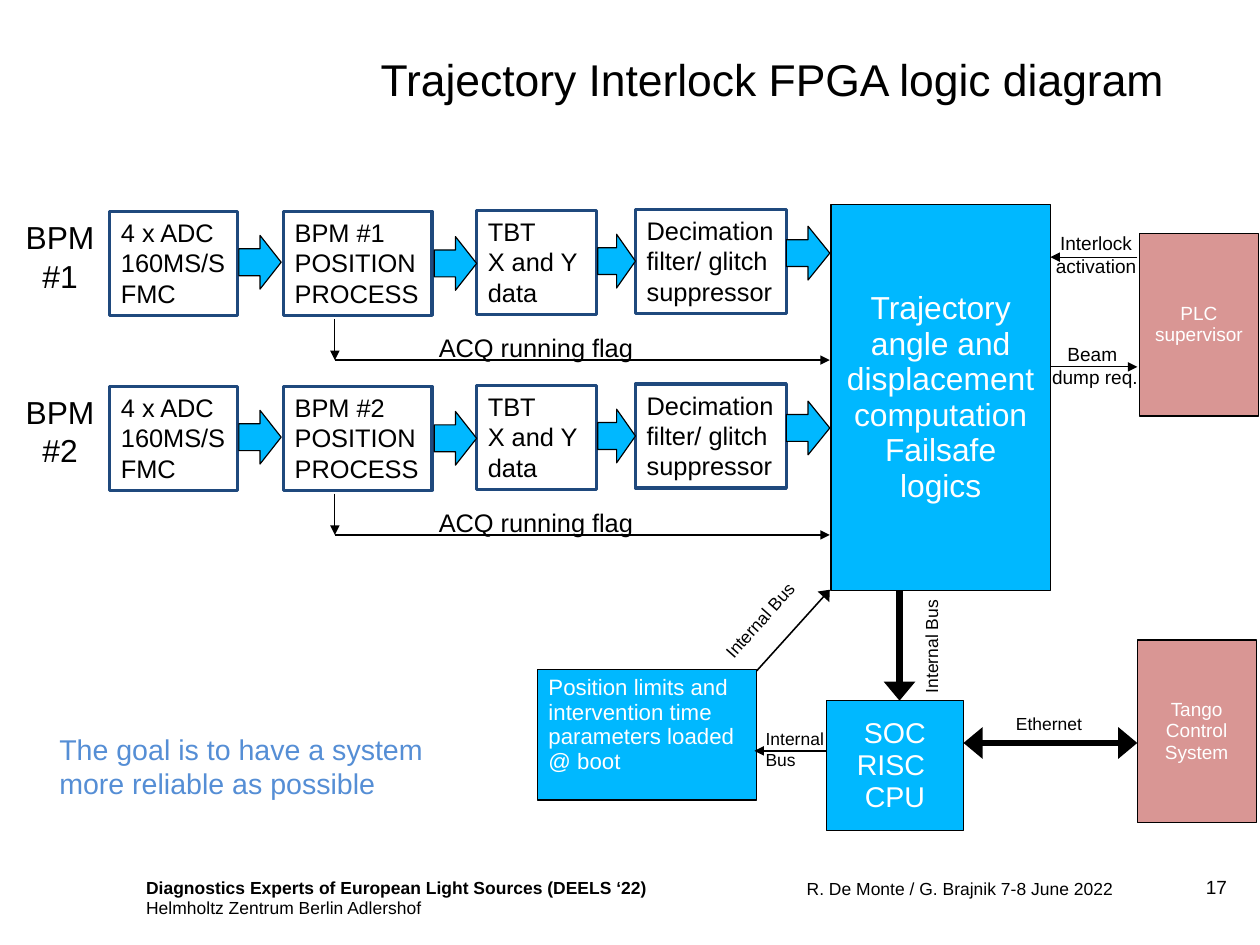
import pptx
import pptx.util
import pptx.oxml.ns
import lxml.etree
from dataclasses import dataclass
from pptx.dml.color import RGBColor
from pptx.enum.shapes import MSO_CONNECTOR, MSO_SHAPE
from pptx.enum.text import MSO_ANCHOR, PP_ALIGN
from pptx.util import Inches


@dataclass(frozen=True)
class Theme:
    font: str = "Arial"
    black: str = "000000"
    white: str = "FFFFFF"
    logic: str = "00B8FF"
    external: str = "D99694"
    outline: str = "1F497D"
    goal: str = "558ED5"
    title: int = 28
    large: int = 20
    medium: int = 18
    stage: int = 16
    note: int = 14
    label: int = 12
    small: int = 11
    tight: float = 0.93


THEME = Theme()
LEFT, CENTER, RIGHT = PP_ALIGN.LEFT, PP_ALIGN.CENTER, PP_ALIGN.RIGHT

# Content: places are (left, top, width, height) in inches
TITLE = "Trajectory Interlock FPGA logic diagram"
CHANNELS = ["#1", "#2"]
CHANNEL_PITCH = 1.53
STAGES = [
    (["4 x ADC", "160MS/S", "FMC"], (0.96, 1.85, 1.12, 0.91)),
    (["BPM {}", "POSITION", "PROCESS"], (2.48, 1.85, 1.3, 0.91)),
    (["TBT", "X and Y", "data"], (4.17, 1.84, 1.05, 0.91)),
    (["Decimation filter/ glitch suppressor"], (5.56, 1.83, 1.32, 0.91)),
]
STAGE_ARROWS = [
    (2.09, 2.06, 0.37, 0.47),
    (3.8, 2.07, 0.37, 0.47),
    (5.23, 2.05, 0.33, 0.47),
    (6.88, 1.98, 0.38, 0.47),
]
BLOCKS = [  # paragraphs, place, fill, size, alignment, anchor
    (["Trajectory angle and displacement computation Failsafe logics"],
     (7.27, 1.79, 1.92, 3.38), THEME.logic, THEME.large, CENTER, MSO_ANCHOR.MIDDLE),
    (["Position limits and intervention time parameters loaded @ boot"],
     (4.7, 5.86, 1.92, 1.14), THEME.logic, THEME.note, LEFT, MSO_ANCHOR.TOP),
    (["SOC RISC ", "CPU"],
     (7.23, 6.13, 1.2, 1.14), THEME.logic, THEME.medium, CENTER, MSO_ANCHOR.MIDDLE),
    (["PLC", "supervisor"],
     (9.97, 2.04, 1.04, 1.6), THEME.external, THEME.label, CENTER, MSO_ANCHOR.MIDDLE),
    (["Tango Control System"],
     (9.95, 5.6, 1.04, 1.6), THEME.external, THEME.label, CENTER, MSO_ANCHOR.MIDDLE),
]
LINKS = [  # start, end, width in points, arrowhead at both ends
    ((9.95, 2.25), (9.19, 2.25), 0.75, False),
    ((9.19, 3.21), (9.95, 3.21), 0.75, False),
    ((7.87, 5.17), (7.87, 6.13), 4, False),
    ((6.62, 5.87), (7.26, 5.16), 1, False),
    ((7.23, 6.57), (6.6, 6.57), 0.75, False),
    ((8.43, 6.5), (9.95, 6.5), 4, True),
]
LABELS = [  # paragraphs, place, size, alignment, rotation
    (["Interlock", "activation"], (9.07, 1.98, 1.04, 0.5), THEME.label, CENTER, 0),
    (["Beam ", "dump req."], (9.1, 2.95, 0.96, 0.5), THEME.label, CENTER, 0),
    (["Internal Bus"], (6.14, 5.28, 1.02, 0.29), THEME.small, LEFT, 311.6),
    (["Internal Bus"], (7.64, 5.51, 1.02, 0.29), THEME.small, LEFT, 270),
    (["Internal", "Bus"], (6.6, 6.32, 0.76, 0.47), THEME.small, LEFT, 0),
    (["Ethernet"], (8.79, 6.19, 0.78, 0.29), THEME.small, LEFT, 0),
]
GOAL = ["The goal is to have a system", "more reliable as possible"]
EVENT = ["Diagnostics Experts of European Light Sources (DEELS ‘22)",
         "Helmholtz Zentrum Berlin Adlershof"]
AUTHORS = ["R. De Monte / G. Brajnik 7-8 June 2022"]
PAGE_NUMBER = ["17"]


def color(value):
    return RGBColor.from_string(value)


def inches(values):
    return [Inches(value) for value in values]


def lower(place, offset):
    left, top, width, height = place
    return left, top + offset, width, height


def write(shape, lines, size, text_color=THEME.black, align=LEFT,
          anchor=MSO_ANCHOR.TOP, spacing=1.0, insets=(0.1, 0.05, 0.1, 0.05)):
    frame = shape.text_frame
    frame.text = "\n".join(lines)
    frame.word_wrap = True
    frame.vertical_anchor = anchor
    (frame.margin_left, frame.margin_top,
     frame.margin_right, frame.margin_bottom) = inches(insets)
    for paragraph in frame.paragraphs:
        paragraph.alignment = align
        paragraph.line_spacing = spacing
        for run in paragraph.runs:
            run.font.name = THEME.font
            run.font.size = pptx.util.Pt(size)
            run.font.color.rgb = color(text_color)


def add_text(slide, lines, place, size, rotation=0, **style):
    box = slide.shapes.add_textbox(*inches(place))
    box.rotation = rotation
    write(box, lines, size, **style)
    return box


def add_block(slide, kind, place, fill=None, line=THEME.black, width=0.75):
    shape = slide.shapes.add_shape(kind, *inches(place))
    shape.shadow.inherit = False
    if fill:
        shape.fill.solid()
        shape.fill.fore_color.rgb = color(fill)
    else:
        shape.fill.background()
    shape.line.color.rgb = color(line)
    shape.line.width = pptx.util.Pt(width)
    return shape


def add_arrow(slide, start, end, width=0.75, both_ends=False):
    arrow = slide.shapes.add_connector(
        MSO_CONNECTOR.STRAIGHT, *inches(start), *inches(end))
    arrow.line.color.rgb = color(THEME.black)
    arrow.line.width = pptx.util.Pt(width)
    line = arrow.line._get_or_add_ln()
    head_width = "lg" if width >= 1 else "med"
    for tag in ["a:headEnd", "a:tailEnd"] if both_ends else ["a:tailEnd"]:
        lxml.etree.SubElement(line, pptx.oxml.ns.qn(tag), type="triangle", w=head_width)
    lxml.etree.SubElement(arrow._element.spPr, pptx.oxml.ns.qn("a:effectLst"))


def add_channel(slide, number, offset):
    # Acquisition flag runs from the position process to the logic block
    add_arrow(slide, (2.93, 2.79 + offset), (2.93, 3.15 + offset))
    add_arrow(slide, (2.93, 3.15 + offset), (7.26, 3.15 + offset))
    add_text(slide, ["ACQ running flag"], lower((3.74, 2.86, 1.92, 0.37), offset),
             THEME.stage)
    # Processing chain
    add_text(slide, ["BPM", number], lower((0.12, 1.86, 0.81, 0.77), offset),
             THEME.large, align=CENTER)
    for lines, place in STAGES:
        stage = add_block(slide, MSO_SHAPE.RECTANGLE, lower(place, offset),
                          line=THEME.outline, width=2)
        write(stage, [line.format(number) for line in lines], THEME.stage)
    for place in STAGE_ARROWS:
        add_block(slide, MSO_SHAPE.RIGHT_ARROW, lower(place, offset), THEME.logic)


def main():
    # The page is 28 by 21 centimetres
    presentation = pptx.Presentation()
    presentation.slide_width = pptx.util.Cm(28)
    presentation.slide_height = pptx.util.Cm(21)
    slide = presentation.slides.add_slide(presentation.slide_layouts[5])

    # Title
    title = slide.shapes.title
    title.left, title.top, title.width, title.height = inches((3.23, 0.2, 7.32, 1.02))
    write(title, [TITLE], THEME.title, anchor=MSO_ANCHOR.MIDDLE, spacing=THEME.tight)

    # Diagram
    for index, number in enumerate(CHANNELS):
        add_channel(slide, number, index * CHANNEL_PITCH)
    for lines, place, fill, size, align, anchor in BLOCKS:
        block = add_block(slide, MSO_SHAPE.RECTANGLE, place, fill)
        write(block, lines, size, THEME.white, align, anchor, THEME.tight)
    for link in LINKS:
        add_arrow(slide, *link)
    for lines, place, size, align, rotation in LABELS:
        add_text(slide, lines, place, size, rotation, align=align)

    # Goal and footer
    add_text(slide, GOAL, (0.42, 6.35, 3.48, 0.71), THEME.medium,
             text_color=THEME.goal)
    footer = {"spacing": THEME.tight, "insets": (0.1, 0.06, 0.1, 0.05)}
    event = add_text(slide, EVENT, (1.18, 7.63, 5.35, 0.39), THEME.small, **footer)
    event.text_frame.paragraphs[0].runs[0].font.bold = True
    add_text(slide, AUTHORS, (6.22, 7.64, 3.62, 0.34), THEME.small,
             align=RIGHT, **footer)
    add_text(slide, PAGE_NUMBER, (10.55, 7.68, 0.32, 0.25), THEME.label,
             spacing=THEME.tight, insets=(0, 0, 0, 0))

    presentation.save("out.pptx")


if __name__ == "__main__":
    main()
